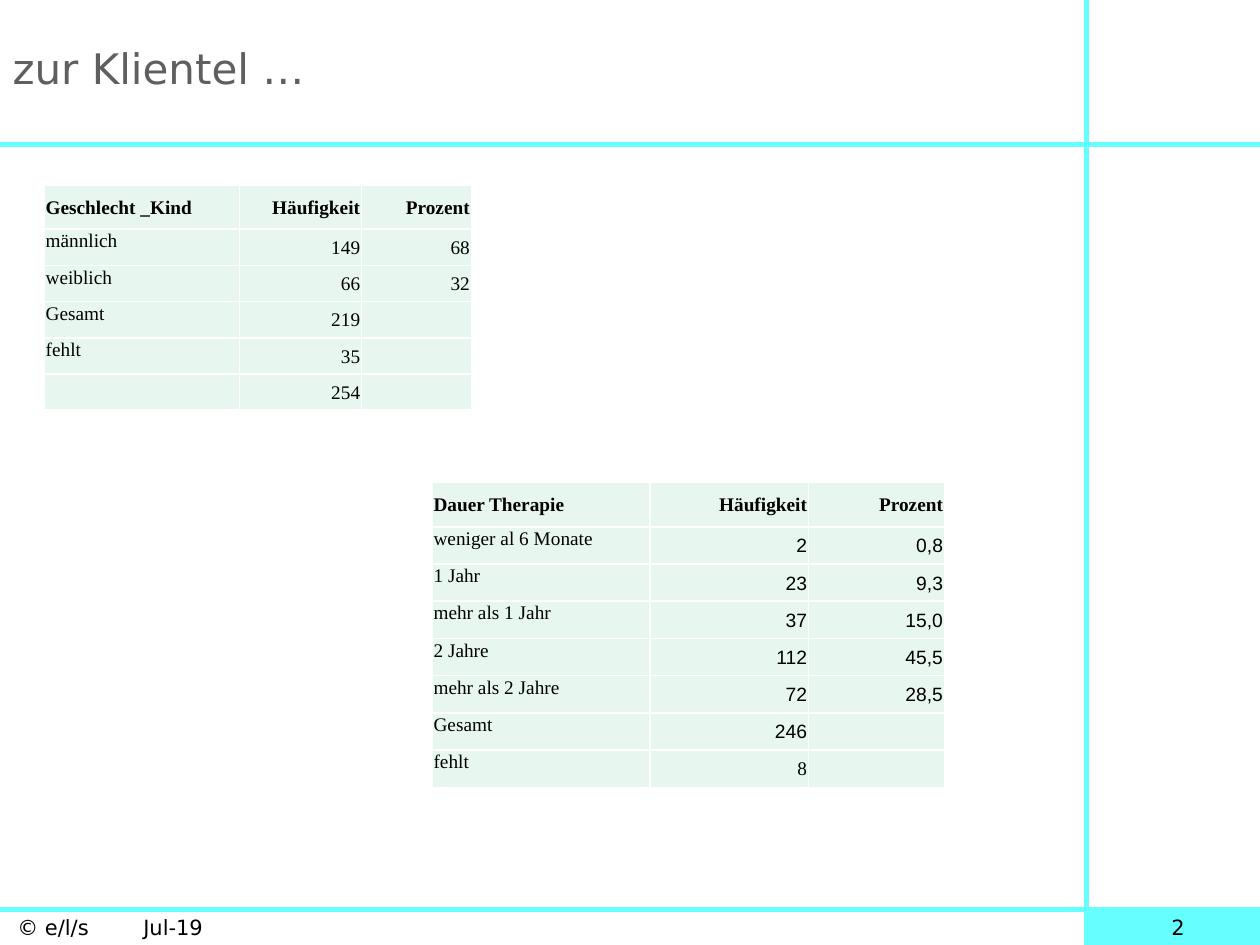
from dataclasses import dataclass

from lxml import etree
from pptx import Presentation
from pptx.dml.color import RGBColor
from pptx.enum import shapes, text
from pptx.oxml import ns
from pptx.util import Cm, Pt

CYAN, MINT, WHITE, BLACK, GREY = "66FFFF", "E7F6EF", "FFFFFF", "000000", "5F5F5F"
SERIF, SANS, HEADING = "Times New Roman", "Arial", "DejaVu Sans"
LEFT, CENTER, RIGHT = text.PP_ALIGN.LEFT, text.PP_ALIGN.CENTER, text.PP_ALIGN.RIGHT
WIDTH, HEIGHT = 25.4, 19.05
SIDEBAR_X, HEADER_Y, FOOTER_Y = 21.9, 2.92, 18.34
FOOTER_HEIGHT = HEIGHT - FOOTER_Y


@dataclass
class Rule:
    x1: float
    y1: float
    x2: float
    y2: float


@dataclass
class FooterText:
    left: float
    width: float
    words: str
    align: text.PP_ALIGN


@dataclass
class FrequencyTable:
    left: float
    top: float
    columns: list[float]
    row_height: float
    rows: list[list[str]]
    sans_rows: range


RULES = [
    Rule(SIDEBAR_X, 0, SIDEBAR_X, HEIGHT),
    Rule(0, HEADER_Y, WIDTH, HEADER_Y),
    Rule(0, FOOTER_Y, WIDTH, FOOTER_Y),
]
FOOTERS = [
    FooterText(0.1, 5, "© e/l/s\tJul-19", LEFT),
    FooterText(22.1, 3.3, "2", CENTER),
]
TABLES = [
    FrequencyTable(0.89, 3.73, [3.94, 2.46, 2.21], 0.73, [
        ["Geschlecht _Kind", "Häufigkeit", "Prozent"],
        ["männlich", "149", "68"],
        ["weiblich", "66", "32"],
        ["Gesamt", "219", ""],
        ["fehlt", "35", ""],
        ["", "254", ""],
    ], range(0)),
    FrequencyTable(8.71, 9.73, [4.39, 3.2, 2.74], 0.75, [
        ["Dauer Therapie", "Häufigkeit", "Prozent"],
        ["weniger al 6 Monate", "2", "0,8"],
        ["1 Jahr", "23", "9,3"],
        ["mehr als 1 Jahr", "37", "15,0"],
        ["2 Jahre", "112", "45,5"],
        ["mehr als 2 Jahre", "72", "28,5"],
        ["Gesamt", "246", ""],
        ["fehlt", "8", ""],
    ], range(1, 7)),
]


def color(value: str) -> RGBColor:
    return RGBColor.from_string(value)


def add_run(paragraph, words: str, size: float, font: str, ink: str, bold: bool = False) -> None:
    run = paragraph.add_run()
    run.text = words
    run.font.size, run.font.name, run.font.bold = Pt(size), font, bold
    run.font.color.rgb = color(ink)


def fill_title(slide) -> None:
    title = slide.shapes.title
    title.left, title.top, title.width, title.height = Cm(0), Cm(0), Cm(21.7), Cm(2.72)
    title.text_frame.vertical_anchor = text.MSO_ANCHOR.MIDDLE
    paragraph = title.text_frame.paragraphs[0]
    paragraph.alignment = LEFT
    add_run(paragraph, "zur Klientel …", 24, HEADING, GREY)


def draw_number_panel(slide) -> None:
    panel = slide.shapes.add_shape(
        shapes.MSO_SHAPE.RECTANGLE,
        Cm(SIDEBAR_X), Cm(FOOTER_Y), Cm(WIDTH - SIDEBAR_X), Cm(FOOTER_HEIGHT))
    panel.shadow.inherit = False
    panel.fill.solid()
    panel.fill.fore_color.rgb = color(CYAN)
    panel.line.color.rgb = color(CYAN)
    panel.line.width = Pt(1)


def draw_rule(slide, rule: Rule) -> None:
    connector = slide.shapes.add_connector(
        shapes.MSO_CONNECTOR.STRAIGHT, Cm(rule.x1), Cm(rule.y1), Cm(rule.x2), Cm(rule.y2))
    connector.line.color.rgb = color(CYAN)
    connector.line.width = Pt(3)
    etree.SubElement(connector._element.spPr, ns.qn("a:effectLst"))


def draw_footer(slide, footer: FooterText) -> None:
    frame = slide.shapes.add_textbox(
        Cm(footer.left), Cm(FOOTER_Y), Cm(footer.width), Cm(FOOTER_HEIGHT)).text_frame
    frame.word_wrap = True
    frame.vertical_anchor = text.MSO_ANCHOR.MIDDLE
    frame.paragraphs[0].alignment = footer.align
    add_run(frame.paragraphs[0], footer.words, 12, HEADING, BLACK)


def add_borders(cell) -> None:
    properties = cell._tc.get_or_add_tcPr()
    for position, side in enumerate(("lnL", "lnR", "lnT", "lnB")):
        border = etree.Element(ns.qn(f"a:{side}"), w=str(Pt(1)))
        fill = etree.SubElement(border, ns.qn("a:solidFill"))
        etree.SubElement(fill, ns.qn("a:srgbClr"), val=WHITE)
        properties.insert(position, border)


def fill_cell(cell, words: str, header: bool, label: bool, font: str) -> None:
    cell.margin_left = cell.margin_right = cell.margin_top = Cm(0.03)
    cell.margin_bottom = Cm(0)
    cell.fill.solid()
    cell.fill.fore_color.rgb = color(MINT)
    add_borders(cell)
    top_aligned = label and not header
    cell.vertical_anchor = text.MSO_ANCHOR.TOP if top_aligned else text.MSO_ANCHOR.MIDDLE
    paragraph = cell.text_frame.paragraphs[0]
    paragraph.alignment = LEFT if label else RIGHT
    if words:
        add_run(paragraph, words, 11, font, BLACK, header)
    else:
        etree.SubElement(paragraph._p, ns.qn("a:endParaRPr"), sz="1100")


def draw_table(slide, data: FrequencyTable) -> None:
    heights = [0.89] + [data.row_height] * (len(data.rows) - 1)
    table = slide.shapes.add_table(
        len(data.rows), len(data.columns), Cm(data.left), Cm(data.top),
        Cm(sum(data.columns)), Cm(sum(heights))).table
    for column, width in zip(table.columns, data.columns):
        column.width = Cm(width)
    for r, (height, values) in enumerate(zip(heights, data.rows)):
        table.rows[r].height = Cm(height)
        for c, words in enumerate(values):
            font = SANS if r in data.sans_rows and c > 0 else SERIF
            fill_cell(table.cell(r, c), words, r == 0, c == 0, font)


def main() -> None:
    deck = Presentation()
    deck.slide_width, deck.slide_height = Cm(WIDTH), Cm(HEIGHT)
    slide = deck.slides.add_slide(deck.slide_layouts[5])
    draw_number_panel(slide)
    for rule in RULES:
        draw_rule(slide, rule)
    fill_title(slide)
    for footer in FOOTERS:
        draw_footer(slide, footer)
    for data in TABLES:
        draw_table(slide, data)
    deck.save("out.pptx")


if __name__ == "__main__":
    main()
